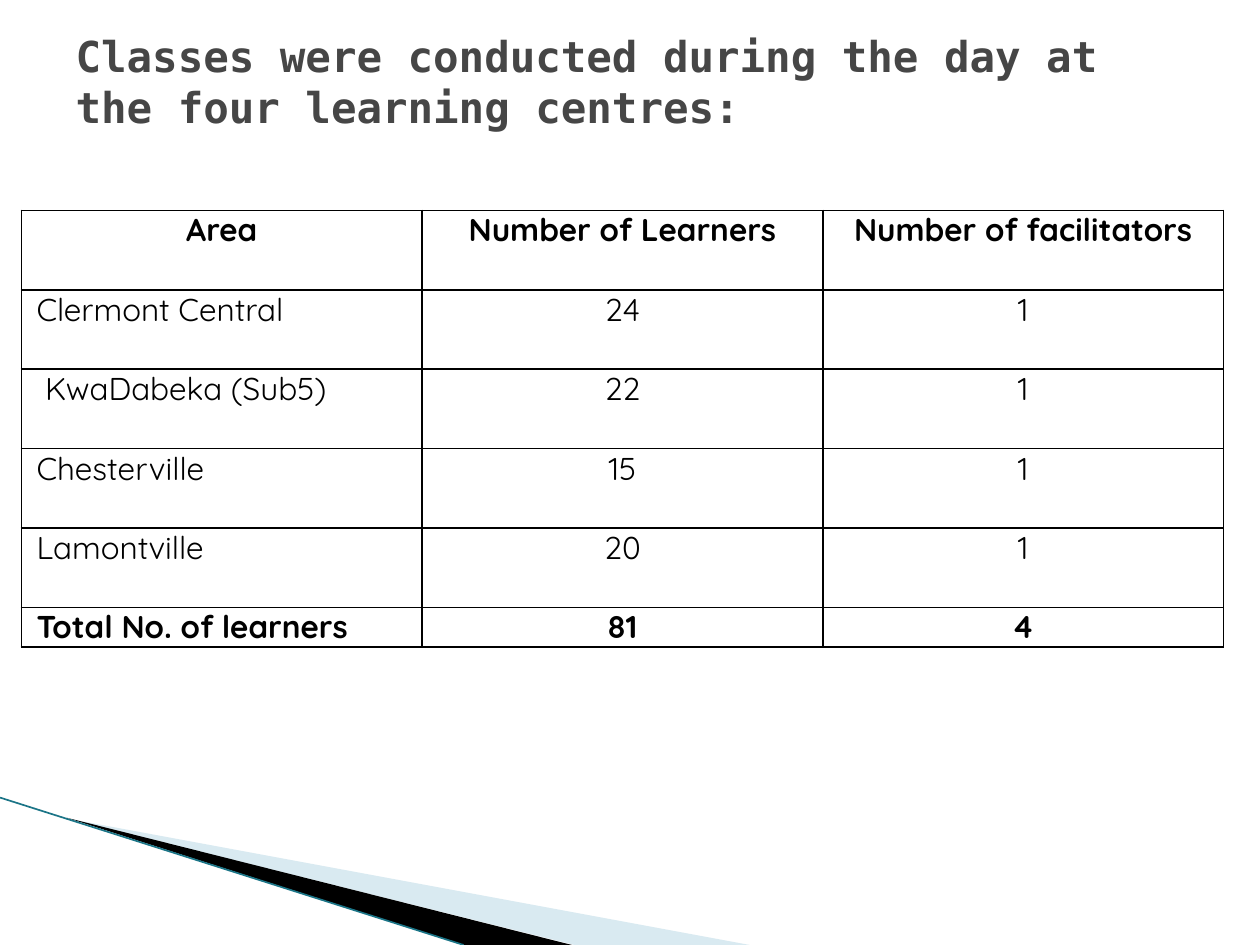
"""Build the slide listing learners and facilitators at the four learning centres."""
import pptx
import pptx.util
import pptx.dml.color
import pptx.enum.shapes
import pptx.enum.text
import pptx.oxml
import pptx.oxml.ns
from lxml import etree

Inches, Pt = pptx.util.Inches, pptx.util.Pt
PP_ALIGN, ANCHOR = pptx.enum.text.PP_ALIGN, pptx.enum.text.MSO_ANCHOR
qn = pptx.oxml.ns.qn

TITLE = "Classes were conducted during the day at the four learning centres:"
ROWS = [
    ("Area", "Number of Learners", "Number of facilitators"),
    ("Clermont Central", "24", "1"),
    (" KwaDabeka (Sub5)", "22", "1"),
    ("Chesterville", "15", "1"),
    ("Lamontville", "20", "1"),
    ("Total No. of learners", "81", "4"),
]
TABLE_LEFT, TABLE_TOP, COL_W, ROW_H, TOTAL_H = 0.17, 1.67, 3.18, 0.63, 0.31
WEDGES = [
    ([(0.55, 6.5), (5.95, 7.5), (4.56, 7.5)], "A0CBDC", 40),
    ([(0.53, 6.49), (4.54, 7.5), (3.68, 7.5)], "000000", 100),
]
EDGE = (0, 6.33, 3.68, 7.5)


def rgb(value):
    return pptx.dml.color.RGBColor.from_string(value)


def write(tf, text, font="Quicksand", size=18, color="000000", bold=False, align=PP_ALIGN.LEFT):
    p = tf.paragraphs[0]
    p.alignment = align
    r = p.add_run()
    r.text = text
    r.font.name, r.font.size, r.font.bold = font, Pt(size), bold
    r.font.color.rgb = rgb(color)


def add_wedge(s, points, color, opacity):
    fb = s.shapes.build_freeform(*[Inches(v) for v in points[0]])
    fb.add_line_segments([(Inches(x), Inches(y)) for x, y in points[1:]], close=True)
    sp = fb.convert_to_shape()
    sp.shadow.inherit = False
    sp.line.fill.background()
    sp.fill.solid()
    sp.fill.fore_color.rgb = rgb(color)
    if opacity < 100:
        clr = sp.fill._xPr.find(".//" + qn("a:srgbClr"))
        etree.SubElement(clr, qn("a:alpha"), val=str(opacity * 1000))


def add_edge(s):
    line = s.shapes.add_connector(
        pptx.enum.shapes.MSO_CONNECTOR.STRAIGHT, *[Inches(v) for v in EDGE])
    line.line.color.rgb = rgb("1B7587")
    line.line.width = Pt(0.95)
    etree.SubElement(line._element.spPr, qn("a:effectLst"))


def border(cell, color="000000", width=1):
    tcPr = cell._tc.get_or_add_tcPr()
    for i, side in enumerate(("lnL", "lnR", "lnT", "lnB")):
        ln = etree.Element(qn("a:" + side), w=str(Pt(width)))
        fill = etree.SubElement(ln, qn("a:solidFill"))
        etree.SubElement(fill, qn("a:srgbClr"), val=color)
        tcPr.insert(i, ln)


def add_centres_table(s):
    heights = [ROW_H] * (len(ROWS) - 1) + [TOTAL_H]
    cols = len(ROWS[0])
    table = s.shapes.add_table(
        len(ROWS), cols, Inches(TABLE_LEFT), Inches(TABLE_TOP),
        Inches(COL_W * cols), Inches(sum(heights))).table
    table.first_row = table.horz_banding = False
    for col in table.columns:
        col.width = Inches(COL_W)
    for i, (values, height) in enumerate(zip(ROWS, heights)):
        table.rows[i].height = Inches(height)
        for j, text in enumerate(values):
            cell = table.cell(i, j)
            cell.margin_left = cell.margin_right = Inches(0.12)
            cell.margin_top = cell.margin_bottom = 0
            cell.fill.background()
            border(cell)
            write(cell.text_frame, text, bold=i in (0, len(ROWS) - 1),
                  align=PP_ALIGN.LEFT if j == 0 and i else PP_ALIGN.CENTER)


def add_title(s):
    sp = s.shapes.title
    sp.left, sp.top, sp.width, sp.height = [Inches(v) for v in (0.5, 0.3, 9, 1.25)]
    tf = sp.text_frame
    tf.word_wrap = True
    tf.auto_size = pptx.enum.text.MSO_AUTO_SIZE.NONE
    tf.vertical_anchor = ANCHOR.MIDDLE
    tf.margin_top, tf.margin_bottom = 0, Inches(0.56)
    write(tf, TITLE, font="DejaVu Sans Mono", size=24.3, color="464646", bold=True)


def main():
    prs = pptx.Presentation()
    prs.slide_width, prs.slide_height = Inches(10), Inches(7.5)
    s = prs.slides.add_slide(prs.slide_layouts[5])
    for wedge in WEDGES:
        add_wedge(s, *wedge)
    add_edge(s)
    add_centres_table(s)
    add_title(s)
    prs.save("out.pptx")


if __name__ == "__main__":
    main()
